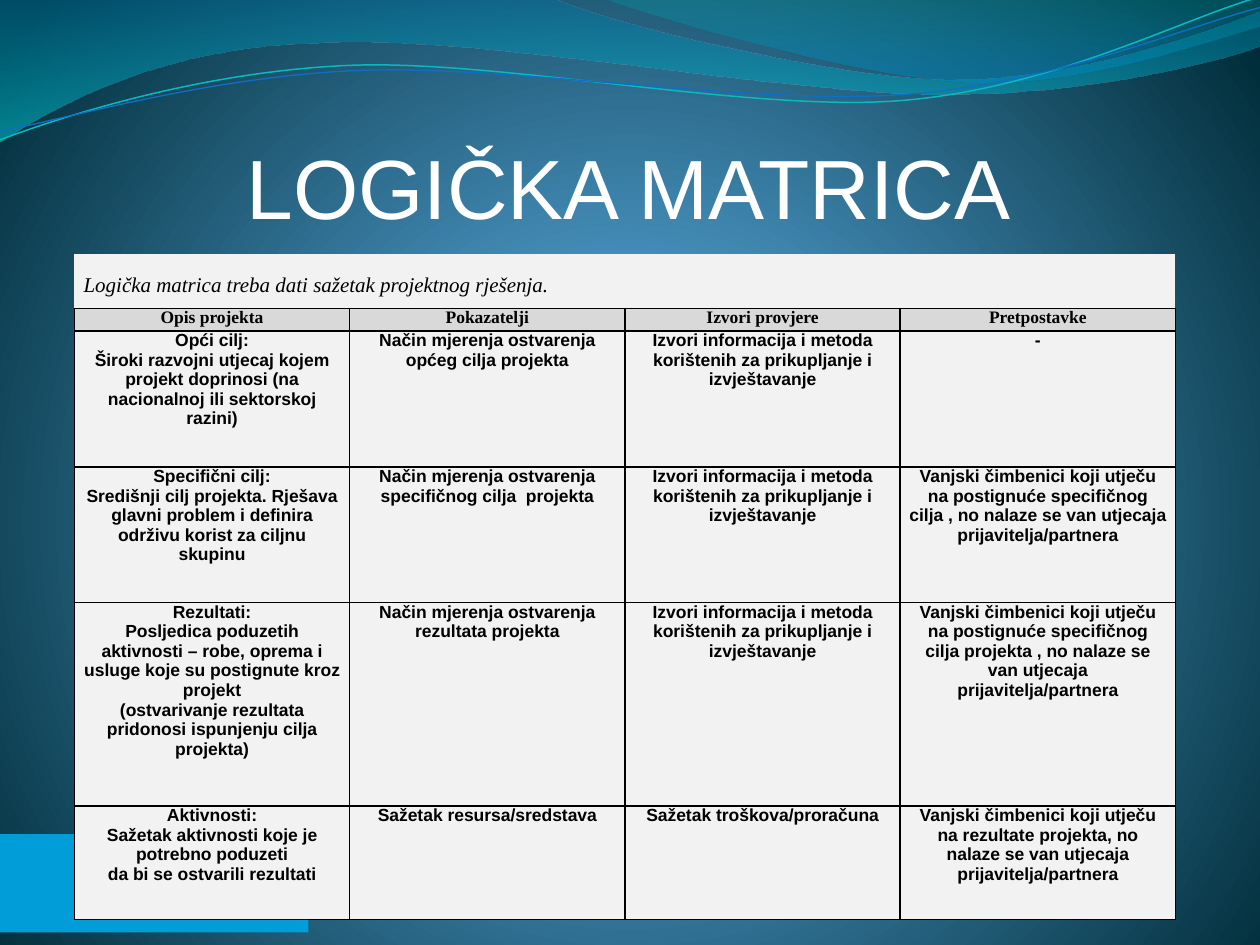
import pptx
import pptx.util
import pptx.dml.color
import pptx.enum.shapes
import pptx.enum.text
import pptx.oxml
import pptx.oxml.ns

Pt = pptx.util.Pt
qn = pptx.oxml.ns.qn
NAMESPACE = 'xmlns:a="http://schemas.openxmlformats.org/drawingml/2006/main"'
CENTER = pptx.enum.text.PP_ALIGN.CENTER
LEFT = pptx.enum.text.PP_ALIGN.LEFT


def color(value):
    return pptx.dml.color.RGBColor.from_string(value)


def apply_gradient(fill, parent, stops, direction):
    fill.solid()
    stop_xml = "".join(
        f'<a:gs pos="{position * 1000}"><a:srgbClr val="{value}">'
        f'<a:alpha val="{opacity * 1000}"/></a:srgbClr></a:gs>'
        for position, value, opacity in stops
    )
    gradient = pptx.oxml.parse_xml(
        f'<a:gradFill {NAMESPACE} rotWithShape="1"><a:gsLst>{stop_xml}</a:gsLst>{direction}</a:gradFill>'
    )
    parent.replace(parent.find(qn("a:solidFill")), gradient)


presentation = pptx.Presentation()
presentation.slide_width = Pt(720)
presentation.slide_height = Pt(540)
slide = presentation.slides.add_slide(presentation.slide_layouts[5])

background_fill = slide.background.fill
background_fill.solid()
apply_gradient(
    background_fill,
    slide.element.find(".//" + qn("p:bgPr")),
    [(0, "4AA0D6", 100), (25, "4C98C7", 100), (100, "002C38", 100)],
    '<a:path path="circle"><a:fillToRect l="10000" t="110000" r="10000" b="100000"/></a:path>',
)

waves = [
    {
        "start": (0, 0),
        "segments": [
            (316.8, -0.7),
            (342.7, 12.2, 478.1, 45.4, 545.8, 45.4),
            (614.2, 45.4, 689.8, 18.7, 720, 6.5),
            (720.7, 25.9),
            (707.8, 31.7, 626.4, 54.7, 537.1, 54),
            (447.8, 54, 275, 20.2, 185, 24.5),
            (92.9, 25.9, 33.1, 59.8, -0.7, 81.4),
        ],
        "stops": [(0, "0074A1", 45), (100, "00C6CF", 55)],
    },
    {
        "start": (344.9, -0.7),
        "segments": [
            (366.5, 7.9, 491, 44.6, 553.7, 46.8),
            (616.3, 49.7, 691.9, 23, 720, 15.1),
            (720, 0),
        ],
        "stops": [(0, "00A1A9", 30), (80, "008BBF", 45)],
    },
    {
        "start": (0, 79.9),
        "segments": [
            (34.6, 67, 113.8, 41, 199.4, 37.4),
            (284.4, 33.8, 427, 64.1, 513.4, 57.6),
            (599.8, 51.1, 675.4, 10.8, 718.6, -1.4),
        ],
        "line": ("0AB8BF", 0.85),
    },
    {
        "start": (0, 74.9),
        "segments": [
            (33.8, 69.1, 118.1, 43.9, 203.8, 40.3),
            (290.2, 36.7, 429.8, 60.5, 516.2, 54),
            (601.9, 48.2, 677.5, 15.1, 720, 4.3),
        ],
        "line": ("0F6FC6", 0.75),
    },
]
for wave in waves:
    start_x, start_y = wave["start"]
    builder = slide.shapes.build_freeform(Pt(start_x), Pt(start_y), scale=1.0)
    corners = [(Pt(segment[-2]), Pt(segment[-1])) for segment in wave["segments"]]
    builder.add_line_segments(corners, close="stops" in wave)
    shape = builder.convert_to_shape()
    shape.shadow.inherit = False
    straight_lines = list(shape.element.iter(qn("a:lnTo")))
    for straight_line, segment in zip(straight_lines, wave["segments"]):
        if len(segment) == 6:
            point_xml = "".join(
                f'<a:pt x="{Pt(x) - shape.left}" y="{Pt(y) - shape.top}"/>'
                for x, y in zip(segment[::2], segment[1::2])
            )
            curve = pptx.oxml.parse_xml(f"<a:cubicBezTo {NAMESPACE}>{point_xml}</a:cubicBezTo>")
            straight_line.getparent().replace(straight_line, curve)
    if "stops" in wave:
        apply_gradient(shape.fill, shape.element.spPr, wave["stops"], '<a:lin ang="5400000" scaled="0"/>')
        shape.line.fill.background()
    else:
        shape.fill.background()
        line_color, line_width = wave["line"]
        shape.line.color.rgb = color(line_color)
        shape.line.width = Pt(line_width)

corner_block = slide.shapes.add_shape(
    pptx.enum.shapes.MSO_SHAPE.RECTANGLE, Pt(-0.7), Pt(476.6), Pt(177), Pt(56.2)
)
corner_block.shadow.inherit = False
corner_block.fill.solid()
corner_block.fill.fore_color.rgb = color("009DD9")
corner_block.line.fill.background()

title = slide.shapes.title
title_box = {"left": Pt(54), "top": Pt(77), "width": Pt(612), "height": Pt(73.4)}
for name, value in title_box.items():
    setattr(title, name, value)
title_frame = {
    "margin_left": 0, "margin_top": 0, "margin_right": Pt(1.4), "margin_bottom": Pt(14.4),
    "word_wrap": True, "vertical_anchor": pptx.enum.text.MSO_ANCHOR.MIDDLE,
}
for name, value in title_frame.items():
    setattr(title.text_frame, name, value)
title.text_frame.text = "LOGIČKA MATRICA"
paragraph = title.text_frame.paragraphs[0]
paragraph.alignment = CENTER
for name, value in {"name": "Arial", "size": Pt(48), "bold": False}.items():
    setattr(paragraph.font, name, value)
paragraph.font.color.rgb = color("FFFFFF")

sources = "Izvori informacija i metoda korištenih za prikupljanje i izvještavanje"
matrix = [
    ["Logička matrica treba dati sažetak projektnog rješenja.", "", "", ""],
    ["Opis projekta", "Pokazatelji", "Izvori provjere", "Pretpostavke"],
    [
        "Opći cilj:\nŠiroki razvojni utjecaj kojem projekt doprinosi (na nacionalnoj ili sektorskoj razini)",
        "Način mjerenja ostvarenja općeg cilja projekta", sources, "-",
    ],
    [
        "Specifični cilj:\nSredišnji cilj projekta. Rješava glavni problem i definira održivu korist za ciljnu skupinu",
        "Način mjerenja ostvarenja specifičnog cilja  projekta", sources,
        "Vanjski čimbenici koji utječu na postignuće specifičnog cilja , no nalaze se van utjecaja prijavitelja/partnera",
    ],
    [
        "Rezultati:\nPosljedica poduzetih aktivnosti – robe, oprema i usluge koje su postignute kroz projekt\n"
        "(ostvarivanje rezultata pridonosi ispunjenju cilja projekta)",
        "Način mjerenja ostvarenja rezultata projekta", sources,
        "Vanjski čimbenici koji utječu na postignuće specifičnog cilja projekta , no nalaze se van utjecaja prijavitelja/partnera",
    ],
    [
        "Aktivnosti:\nSažetak aktivnosti koje je potrebno poduzeti\nda bi se ostvarili rezultati",
        "Sažetak resursa/sredstava", "Sažetak troškova/proračuna",
        "Vanjski čimbenici koji utječu na rezultate projekta, no nalaze se van utjecaja prijavitelja/partnera",
    ],
]
intro_format = {"name": "Times New Roman", "size": Pt(12), "italic": True, "bold": False}
header_format = {"name": "Times New Roman", "size": Pt(10), "italic": False, "bold": True}
body_format = {**header_format, "name": "Arial"}
row_formats = [intro_format, header_format] + [body_format] * 4
row_heights = [31, 13, 77.6, 77.6, 116.2, 64.8]

table = slide.shapes.add_table(6, 4, Pt(42.5), Pt(145.2), Pt(629.2), Pt(sum(row_heights))).table
table.first_row = False
table.horz_banding = False
for column in table.columns:
    column.width = Pt(157.3)
for row_index, (texts, row_format) in enumerate(zip(matrix, row_formats)):
    table.rows[row_index].height = Pt(row_heights[row_index])
    for column_index, text in enumerate(texts):
        cell = table.cell(row_index, column_index)
        cell_format = {
            "margin_left": Pt(5.3), "margin_right": Pt(5.3), "margin_bottom": 0,
            "margin_top": Pt(0 if row_index else 11.5),
        }
        for name, value in cell_format.items():
            setattr(cell, name, value)
        properties = cell._tc.get_or_add_tcPr()
        for side in ("lnL", "lnR", "lnT", "lnB"):
            visible = row_index or side == "lnB"
            paint = '<a:solidFill><a:srgbClr val="000000"/></a:solidFill>' if visible else "<a:noFill/>"
            properties.append(pptx.oxml.parse_xml(f'<a:{side} {NAMESPACE} w="12700">{paint}</a:{side}>'))
        cell.fill.solid()
        cell.fill.fore_color.rgb = color("D9D9D9" if row_index == 1 else "F2F2F2")
        cell.text_frame.text = text
        for paragraph in cell.text_frame.paragraphs:
            paragraph.alignment = CENTER if row_index else LEFT
            for name, value in row_format.items():
                setattr(paragraph.font, name, value)
            paragraph.font.color.rgb = color("000000")
table.cell(0, 0).merge(table.cell(0, 3))

presentation.save("out.pptx")
